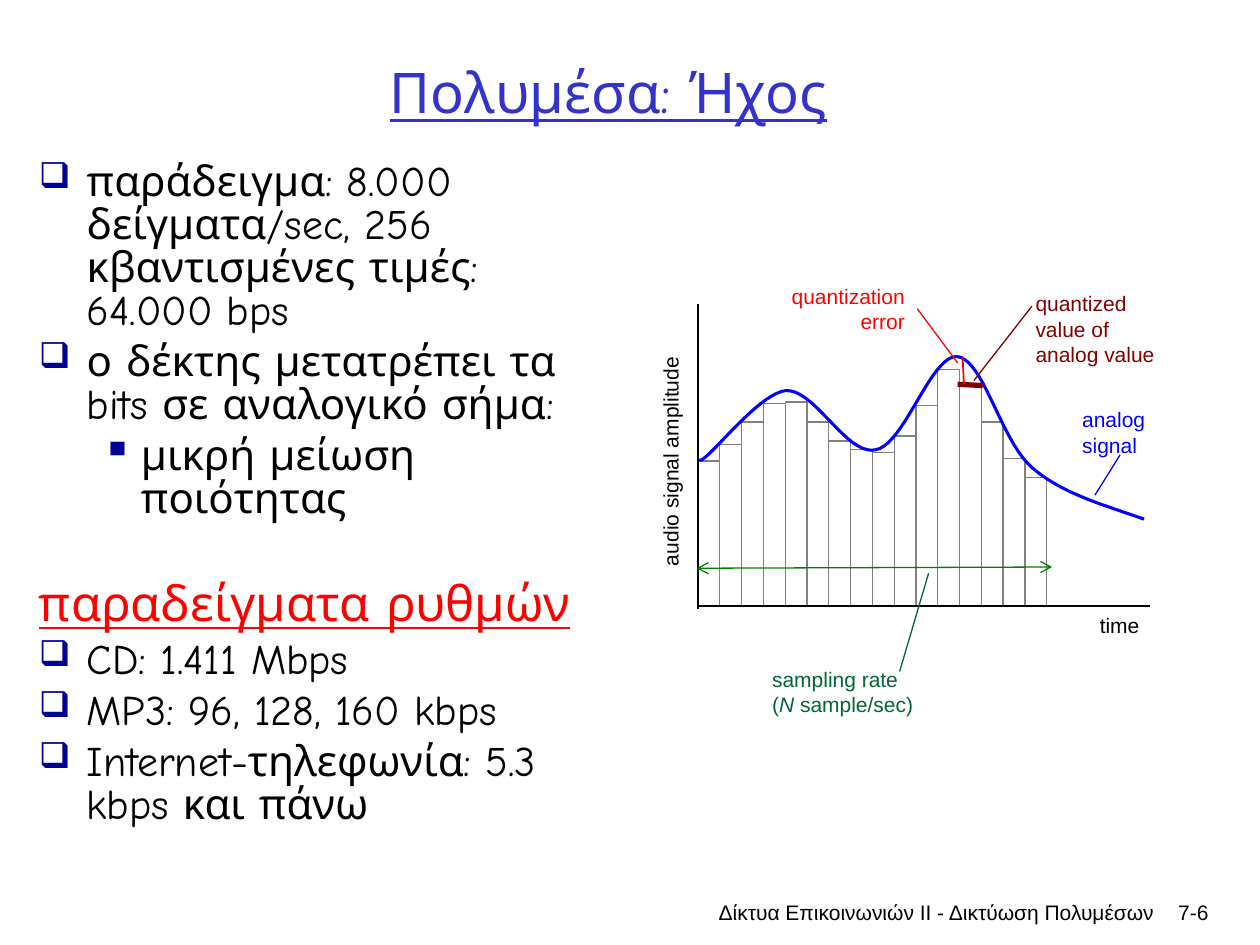
from lxml import etree
from pptx import Presentation, util as u
from pptx.dml.color import RGBColor
from pptx.enum import shapes, text
from pptx.oxml import ns

COLUMNS, ROWS = 100, 75
CELL = u.Inches(0.1)
COLORS = {
    "title": "3333CC", "ink": "000000", "bullet": "000099", "alert": "FF0000",
    "bar": "808080", "signal": "0000FF", "quantized": "800000",
    "range": "008000", "sampling": "006633",
}
BODY_FONT, LABEL_FONT = "Comic Neue", "Arial"
TITLE_BOX = (5.8, 2.5, 85, 9.5)
BODY_BOX = (2.1, 12.4, 45.4, 55.7)
CHART_BOX = (55.4, 22, 38.6, 35.4)
FOOTER_BOX = (45.4, 70.9, 51.5, 5)
SQUARE, SMALL = ("❑", 85, 3.8, -3.8), ("▪", 100, 8.1, -3.1)
PLAIN = (None, 100, 3.8, -3.8)
BODY = [
    ("παράδειγμα: 8.000 δείγματα/sec, 256 κβαντισμένες τιμές: 64.000 bps", SQUARE),
    ("ο δέκτης μετατρέπει τα bits σε αναλογικό σήμα:", SQUARE),
    ("μικρή μείωση ποιότητας", SMALL),
    ("παραδείγματα ρυθμών", PLAIN),
    ("CD: 1.411 Mbps", SQUARE),
    ("MP3: 96, 128, 160 kbps", SQUARE),
    ("Internet-τηλεφωνία: 5.3 kbps και πάνω", SQUARE),
]
BAR_WIDTH, BASELINE = 1.73, 26.1
BAR_HEIGHTS = [11.5, 12.8, 14.6, 16.1, 16.2, 14.6, 13.1, 12.4,
               12.2, 13.5, 15.9, 18.8, 17.5, 14.6, 11.7, 10.2]
CURVE_START = (0.1, 14.5)
CURVE = [
    ((0.5, 15), (4.7, 9.2), (7, 9)),
    ((9.3, 8.9), (11.8, 14.2), (14.1, 13.7)),
    ((16.4, 13.3), (18.5, 6.1), (20.6, 6.3)),
    ((22.7, 6.6), (24, 12.9), (26.5, 15.1)),
    ((28.9, 17.2), (32.3, 18.1), (35.4, 19.2)),
]
CURVE_STEPS = 20
LINES = [
    ((0, 2.1), (0, 26.3), "ink", 0.75),
    ((0, BASELINE), (35.9, BASELINE), "ink", 0.75),
    ((33.5, 14.1), (31.5, 17.3), "signal", 0.75),
    ((20.6, 8.5), (22.6, 8.6), "quantized", 3),
    ((26.5, 2.3), (21.9, 8.2), "quantized", 0.75),
    ((21, 6.3), (21.1, 8.5), "alert", 1),
    ((17.4, 2.5), (20.6, 6.8), "alert", 0.75),
    ((16, 31.3), (18.3, 23.5), "sampling", 0.75),
]
LABELS = [
    ("time", (30.9, 26.1, 5.2, 3), "ink", "LEFT", False),
    ("analog\nsignal", (29.5, 9.8, 7.1, 5), "signal", "LEFT", False),
    ("quantized value of\nanalog value", (25.8, 0.6, 12.8, 7.1), "quantized", "LEFT", True),
    ("quantization error", (5.3, 0, 12.1, 5), "alert", "RIGHT", True),
]


def color(name):
    """Return the named colour."""
    return RGBColor.from_string(COLORS[name])


def cells(*values):
    """Turn grid units into lengths."""
    return [round(value * CELL) for value in values]


def inside(box, part):
    """Move a point or box into the region that holds it."""
    return (box[0] + part[0], box[1] + part[1], *part[2:])


def style(font, face, size, ink, underline=None):
    """Set the look of a font."""
    font.name, font.size, font.underline = face, u.Pt(size), underline
    font.color.rgb = color(ink)


def add_text(page, box, words, face, size, ink, align="LEFT", wrap=True):
    """Add a text box whose lines share one style."""
    shape = page.shapes.add_textbox(*cells(*box))
    frame = shape.text_frame
    frame.word_wrap, frame.text = wrap, words
    for para in frame.paragraphs:
        para.alignment = text.PP_ALIGN[align]
        for span in para.runs:
            style(span.font, face, size, ink)
    return shape


def add_line(page, start, end, ink, width):
    """Draw a straight line without a shadow."""
    line = page.shapes.add_connector(
        shapes.MSO_CONNECTOR.STRAIGHT, *cells(*start, *end))
    line.line.color.rgb, line.line.width = color(ink), u.Pt(width)
    etree.SubElement(line._element.spPr, ns.qn("a:effectLst"))
    return line


def outline(shape, ink, width):
    """Leave a shape unfilled with a coloured outline."""
    shape.shadow.inherit = False
    shape.fill.background()
    shape.line.color.rgb, shape.line.width = color(ink), u.Pt(width)


def add_bullet(para, mark, percent, margin, indent):
    """Set the indent and bullet of a paragraph."""
    props = para._p.get_or_add_pPr()
    for name, length in zip(("marL", "indent"), cells(margin, indent)):
        props.set(name, str(length))
    if mark:
        tint = etree.SubElement(props, ns.qn("a:buClr"))
        etree.SubElement(tint, ns.qn("a:srgbClr"), val=COLORS["bullet"])
        etree.SubElement(props, ns.qn("a:buSzPct"), val=str(percent * 1000))
        etree.SubElement(props, ns.qn("a:buChar"), char=mark)


def add_title(page, box):
    """Place the underlined title."""
    title = add_text(page, box, "Πολυμέσα: Ήχος", BODY_FONT, 32, "title", "CENTER")
    title.text_frame.vertical_anchor = text.MSO_ANCHOR.MIDDLE
    title.text_frame.paragraphs[0].runs[0].font.underline = True


def add_body(page, box):
    """Place the bulleted list and its inner heading."""
    words = "\n".join(line for line, _ in BODY)
    frame = add_text(page, box, words, BODY_FONT, 24, "ink").text_frame
    for index, (para, (_, bullet)) in enumerate(zip(frame.paragraphs, BODY)):
        add_bullet(para, *bullet)
        para.line_spacing = 0.85
        heading = bullet is PLAIN
        if index:
            para.space_before = u.Pt(34 if heading else 4.8)
        if heading:
            style(para.runs[0].font, BODY_FONT, 28, "alert", True)


def add_curve(page, box):
    """Draw the analog signal through its Bézier segments."""
    points, start = [], CURVE_START
    for first, second, end in CURVE:
        for step in range(1, CURVE_STEPS + 1):
            t = step / CURVE_STEPS
            weights = ((1 - t) ** 3, 3 * t * (1 - t) ** 2, 3 * t * t * (1 - t), t ** 3)
            corners = (start, first, second, end)
            points.append([sum(w * c[axis] for w, c in zip(weights, corners))
                           for axis in (0, 1)])
        start = end
    builder = page.shapes.build_freeform(*cells(*inside(box, CURVE_START)))
    builder.add_line_segments([cells(*inside(box, p)) for p in points], close=False)
    outline(builder.convert_to_shape(), "signal", 1.75)


def add_sampling_chart(page, box):
    """Draw the sampled audio signal with its labels."""
    for index, height in enumerate(BAR_HEIGHTS):
        place = (index * BAR_WIDTH, BASELINE - height, BAR_WIDTH, height)
        bar = page.shapes.add_shape(
            shapes.MSO_SHAPE.RECTANGLE, *cells(*inside(box, place)))
        outline(bar, "bar", 0.75)
    add_curve(page, box)
    for start, end, ink, width in LINES:
        add_line(page, inside(box, start), inside(box, end), ink, width)
    span_line = add_line(page, inside(box, (-0.1, 23.1)), inside(box, (28.1, 23)),
                         "range", 0.75)
    for end in ("a:headEnd", "a:tailEnd"):
        etree.SubElement(span_line.line._get_or_add_ln(), ns.qn(end), type="arrow")
    for words, place, ink, align, wrap in LABELS:
        add_text(page, inside(box, place), words, LABEL_FONT, 12, ink, align, wrap)
    amplitude = add_text(page, inside(box, (-11.6, 13, 18.8, 3)),
                         "audio signal amplitude", LABEL_FONT, 12, "ink", wrap=False)
    amplitude.rotation = 270
    rate = add_text(page, inside(box, (4.9, 30.4, 18.7, 5)), "sampling rate\n(",
                    LABEL_FONT, 12, "sampling")
    for words, italic in (("N ", True), ("sample/sec)", False)):
        span = rate.text_frame.paragraphs[1].add_run()
        span.text = words
        style(span.font, LABEL_FONT, 12, "sampling")
        span.font.italic = italic


def add_footer(page, box):
    """Place the course name and page number."""
    for words, place in (("Δίκτυα Επικοινωνιών ΙΙ - Δικτύωση Πολυμέσων", (0, 0, 47.2, 5)),
                         ("7-6", (44.1, 0, 7.4, 5))):
        add_text(page, inside(box, place), words, LABEL_FONT, 12, "ink", "RIGHT")


def main():
    """Build and save the deck."""
    deck = Presentation()
    deck.slide_width, deck.slide_height = cells(COLUMNS, ROWS)
    page = deck.slides.add_slide(deck.slide_layouts[6])
    add_title(page, TITLE_BOX)
    add_body(page, BODY_BOX)
    add_sampling_chart(page, CHART_BOX)
    add_footer(page, FOOTER_BOX)
    deck.save("out.pptx")


if __name__ == "__main__":
    main()
